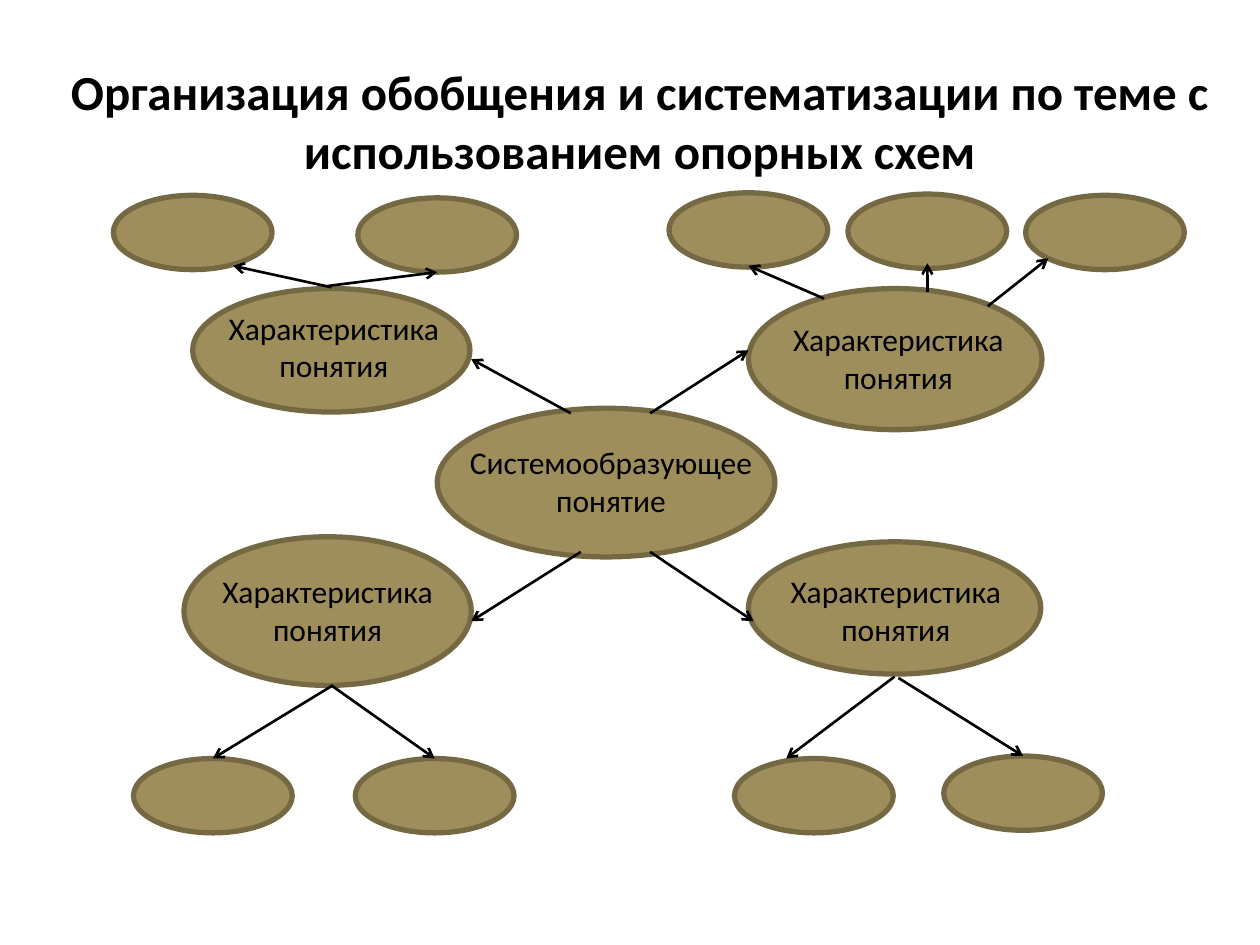
from dataclasses import dataclass

from lxml.etree import SubElement
from pptx import Presentation
from pptx.dml.color import RGBColor
from pptx.enum.shapes import MSO_CONNECTOR, MSO_SHAPE
from pptx.enum.text import MSO_ANCHOR, MSO_AUTO_SIZE, PP_ALIGN
from pptx.oxml.ns import qn
from pptx.util import Pt

SCALE = 9144


@dataclass(frozen=True)
class Theme:
    font: str = "Calibri"
    ink: str = "000000"
    fill: str = "9E8E5C"
    edge: str = "756944"
    head: int = 28
    body: int = 18
    rim: float = 3
    stroke: float = 1.5


THEME = Theme()

TRAIT = "Характеристика понятия"
LEAF = (126, 59)
LABEL = (260, 71)

HUBS = [
    (347, 324, 268, 118, "Системообразующее понятие", 355, 347),
    (146, 426, 228, 118, TRAIT, 130, 449),
    (594, 430, 232, 105, TRAIT, 581, 449),
    (594, 229, 233, 112, TRAIT, 583, 249),
    (153, 229, 220, 98, TRAIT, 135, 240),
]

LEAVES = [
    (90, 155), (284, 157), (531, 153), (673, 154), (814, 155),
    (106, 602), (282, 602), (583, 602), (749, 600),
]

ARROWS = [
    (516, 328, 594, 278), (516, 438, 598, 493),
    (461, 438, 374, 493), (453, 328, 374, 285),
    (784, 243, 832, 205), (736, 232, 736, 209), (654, 237, 594, 211),
    (713, 538, 812, 600), (710, 537, 624, 602),
    (263, 544, 345, 602), (264, 544, 169, 602),
    (260, 227, 347, 216), (263, 228, 185, 211),
]


def px(*sizes):
    return [size * SCALE for size in sizes]


def tint(code):
    return RGBColor.from_string(code)


def write(shape, text, size=THEME.body, bold=False, color=THEME.ink):
    frame = shape.text_frame
    frame.word_wrap = True
    frame.auto_size = MSO_AUTO_SIZE.NONE
    frame.vertical_anchor = MSO_ANCHOR.TOP
    line = frame.paragraphs[0]
    line.alignment = PP_ALIGN.CENTER
    run = line.add_run()
    run.text = text
    run.font.name = THEME.font
    run.font.size = Pt(size)
    run.font.bold = bold
    run.font.color.rgb = tint(color)


def add_head(slide, text):
    title = slide.shapes.title
    title.left, title.top, title.width, title.height = px(35, 44, 945, 104)
    write(title, text, size=THEME.head, bold=True)


def add_oval(slide, *box):
    oval = slide.shapes.add_shape(MSO_SHAPE.OVAL, *px(*box))
    oval.shadow.inherit = False
    oval.fill.solid()
    oval.fill.fore_color.rgb = tint(THEME.fill)
    oval.line.color.rgb = tint(THEME.edge)
    oval.line.width = Pt(THEME.rim)


def add_label(slide, left, top, text):
    write(slide.shapes.add_textbox(*px(left, top, *LABEL)), text)


def add_arrow(slide, *ends):
    arrow = slide.shapes.add_connector(MSO_CONNECTOR.STRAIGHT, *px(*ends))
    arrow.line.color.rgb = tint(THEME.ink)
    arrow.line.width = Pt(THEME.stroke)
    SubElement(arrow.line._get_or_add_ln(), qn("a:tailEnd"), type="arrow")
    SubElement(arrow._element.spPr, qn("a:effectLst"))


def main():
    deck = Presentation()
    deck.slide_width, deck.slide_height = px(1000, 750)
    slide = deck.slides.add_slide(deck.slide_layouts[5])
    add_head(slide, "Организация обобщения и систематизации по теме "
                    "с использованием опорных схем")
    for *box, text, left, top in HUBS:
        add_oval(slide, *box)
        add_label(slide, left, top, text)
    for spot in LEAVES:
        add_oval(slide, *spot, *LEAF)
    for ends in ARROWS:
        add_arrow(slide, *ends)
    deck.save("out.pptx")


if __name__ == "__main__":
    main()
